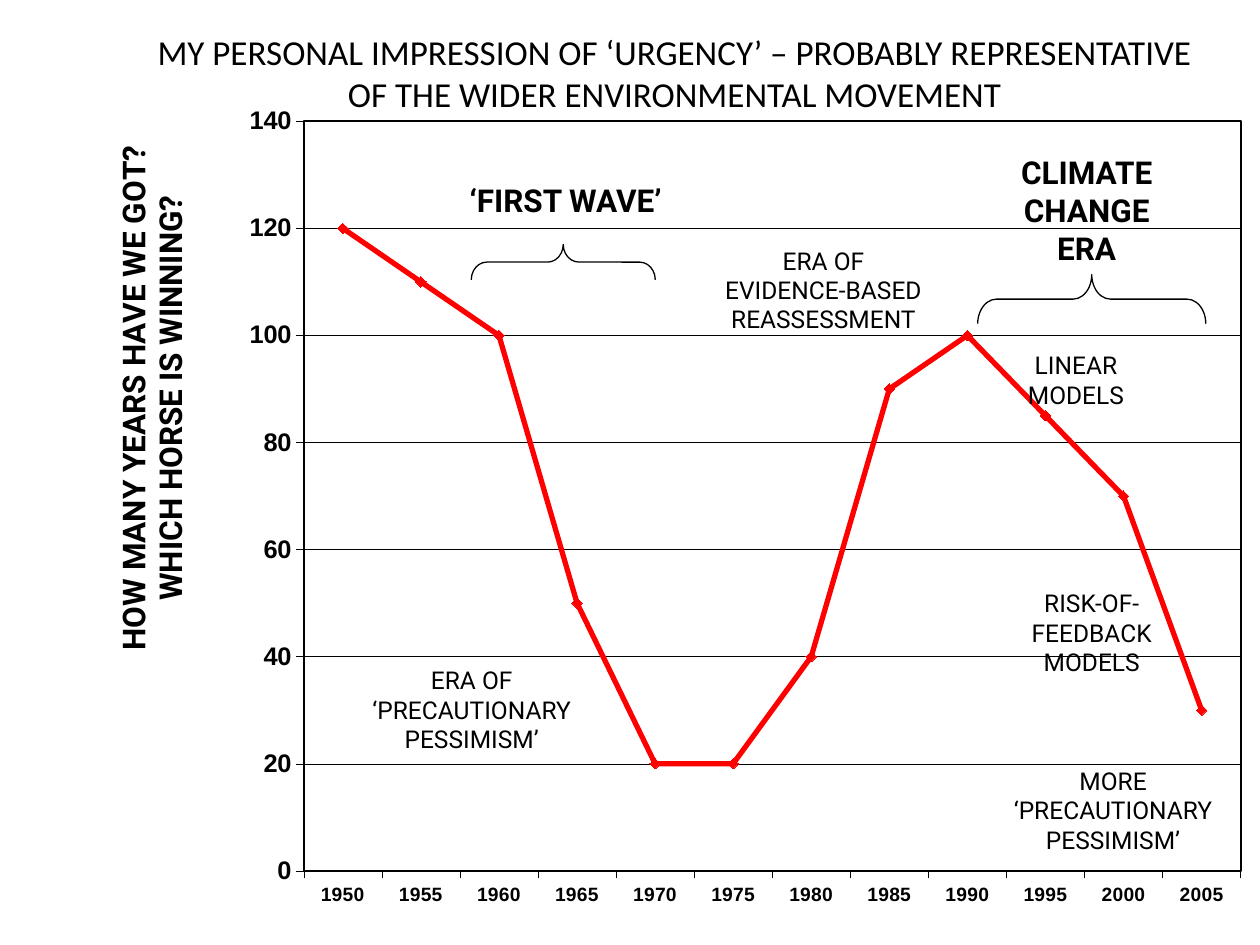
from lxml import etree
from pptx import Presentation
from pptx import util as u
from pptx.chart import data
from pptx.dml.color import RGBColor
from pptx.enum import chart as ch, shapes, text
from pptx.oxml import parse_xml
from pptx.oxml.ns import nsdecls, qn

Pt = u.Pt
COLORS = {"ink": "000000", "urgency": "FF0000"}


def style(font, face, size, bold=False):
    font.name, font.size, font.bold = face, Pt(size), bold
    font.color.rgb = RGBColor.from_string(COLORS["ink"])


def place(layout, **settings):
    for child in list(layout):
        layout.remove(child)
    manual = etree.SubElement(layout, qn("c:manualLayout"))
    for tag, value in settings.items():
        etree.SubElement(manual, qn("c:" + tag)).set("val", str(value))


ink = RGBColor.from_string(COLORS["ink"])
red = RGBColor.from_string(COLORS["urgency"])

prs = Presentation()
prs.slide_width, prs.slide_height = Pt(720), Pt(540)
slide = prs.slides.add_slide(prs.slide_layouts[5])

years = data.CategoryChartData()
years.categories = [str(year) for year in range(1950, 2006, 5)]
years.add_series("Series 1", [120, 110, 100, 50, 20, 20, 40, 90, 100, 85, 70, 30])
chart = slide.shapes.add_chart(
    ch.XL_CHART_TYPE.LINE_MARKERS, Pt(49.7), Pt(46.8), Pt(666), Pt(489.6), years).chart
chart.has_legend = False
chart.has_title = False
style(chart.font, "Arial", 25.2, True)
chart.plots[0].vary_by_categories = False

urgency = chart.plots[0].series[0]
urgency.smooth = False
urgency.format.line.color.rgb = red
urgency.format.line.width = Pt(3)
urgency.marker.style = ch.XL_MARKER_STYLE.DIAMOND
urgency.marker.size = 6
urgency.marker.format.fill.solid()
urgency.marker.format.fill.fore_color.rgb = red
urgency.marker.format.line.color.rgb = red

scale = chart.value_axis
scale.minimum_scale, scale.maximum_scale, scale.major_unit = 0, 140, 20
scale.has_major_gridlines = True
for axis, size in ((chart.category_axis, 11), (scale, 14.5)):
    axis.major_tick_mark = ch.XL_TICK_MARK.OUTSIDE
    axis.minor_tick_mark = ch.XL_TICK_MARK.NONE
    style(axis.tick_labels.font, "Arial", size, True)
for line in (chart.category_axis.format.line, scale.format.line,
             scale.major_gridlines.format.line):
    line.color.rgb = ink
    line.width = Pt(0.25)

question = scale.axis_title
question.text_frame.text = "HOW MANY YEARS HAVE WE GOT?\nWHICH HORSE IS WINNING?"
for paragraph in question.text_frame.paragraphs:
    style(paragraph.font, "Roboto", 18, True)
    for run in paragraph.runs:
        style(run.font, "Roboto", 18, True)
body = question.text_frame._txBody.find(qn("a:bodyPr"))
body.set("rot", "-5400000")
body.set("vert", "horz")
title_layout = question._element.find(qn("c:layout"))
if title_layout is None:
    title_layout = parse_xml(f"<c:layout {nsdecls('c')}/>")
    question._element.find(qn("c:tx")).addnext(title_layout)
place(title_layout, xMode="edge", yMode="edge", x=0.02, y=0.07)

plot_area = chart._chartSpace.find(qn("c:chart")).find(qn("c:plotArea"))
plot_layout = plot_area.find(qn("c:layout"))
if plot_layout is None:
    plot_layout = parse_xml(f"<c:layout {nsdecls('c')}/>")
    plot_area.insert(0, plot_layout)
place(plot_layout, layoutTarget="inner", xMode="edge", yMode="edge",
      x=0.186, y=0.046, w=0.804, h=0.875)
plot_area.append(parse_xml(
    f"<c:spPr {nsdecls('c', 'a')}><a:noFill/><a:ln w='12700'><a:solidFill>"
    f"<a:srgbClr val='{COLORS['ink']}'/></a:solidFill></a:ln></c:spPr>"))

for left, top, width, height, curve in ((311.8, 97.2, 20.2, 105.1, 0.44),
                                        (609.8, 105.8, 28.1, 130.3, 0.38)):
    brace = slide.shapes.add_shape(
        shapes.MSO_SHAPE.LEFT_BRACE, Pt(left), Pt(top), Pt(width), Pt(height))
    brace.adjustments[0], brace.adjustments[1] = curve, 0.5
    brace.rotation = 270
    brace._element.spPr.find(qn("a:xfrm")).set("flipH", "1")
    brace.shadow.inherit = False
    brace.fill.background()
    brace.line.color.rgb = ink
    brace.line.width = Pt(0.75)

eras = [
    ("‘FIRST WAVE’", 235.4, 100.1, 175.7, 28.8, 18),
    ("CLIMATE CHANGE ERA", 564.5, 84.2, 113, 72, 18),
    ("LINEAR MODELS", 569.5, 196.6, 90.7, 41, 14),
    ("RISK-OF-FEEDBACK MODELS", 558.7, 332.6, 130.3, 58.3, 14),
    ("ERA OF ‘PRECAUTIONARY PESSIMISM’", 195.8, 376.6, 147.6, 58.3, 14),
    ("ERA OF EVIDENCE-BASED REASSESSMENT", 405.4, 136.8, 130.3, 58.3, 14),
    ("MORE ‘PRECAUTIONARY PESSIMISM’", 566.6, 434.2, 139, 58.3, 14),
]
for words, left, top, width, height, size in eras:
    era = slide.shapes.add_textbox(Pt(left), Pt(top), Pt(width), Pt(height)).text_frame
    era.word_wrap = True
    era.text = words
    era.paragraphs[0].alignment = text.PP_ALIGN.CENTER
    style(era.paragraphs[0].runs[0].font, "Roboto", size, size == 18)

heading = slide.shapes.title
heading.left, heading.top, heading.width, heading.height = (
    Pt(81.4), Pt(-3.6), Pt(608.4), Pt(90))
heading.text_frame.text = ("MY PERSONAL IMPRESSION OF ‘URGENCY’ – PROBABLY REPRESENTATIVE "
                           "OF THE WIDER ENVIRONMENTAL MOVEMENT")
heading.text_frame.vertical_anchor = text.MSO_ANCHOR.MIDDLE
heading.text_frame.paragraphs[0].alignment = text.PP_ALIGN.CENTER
style(heading.text_frame.paragraphs[0].runs[0].font, "Calibri", 20)

prs.save("out.pptx")
